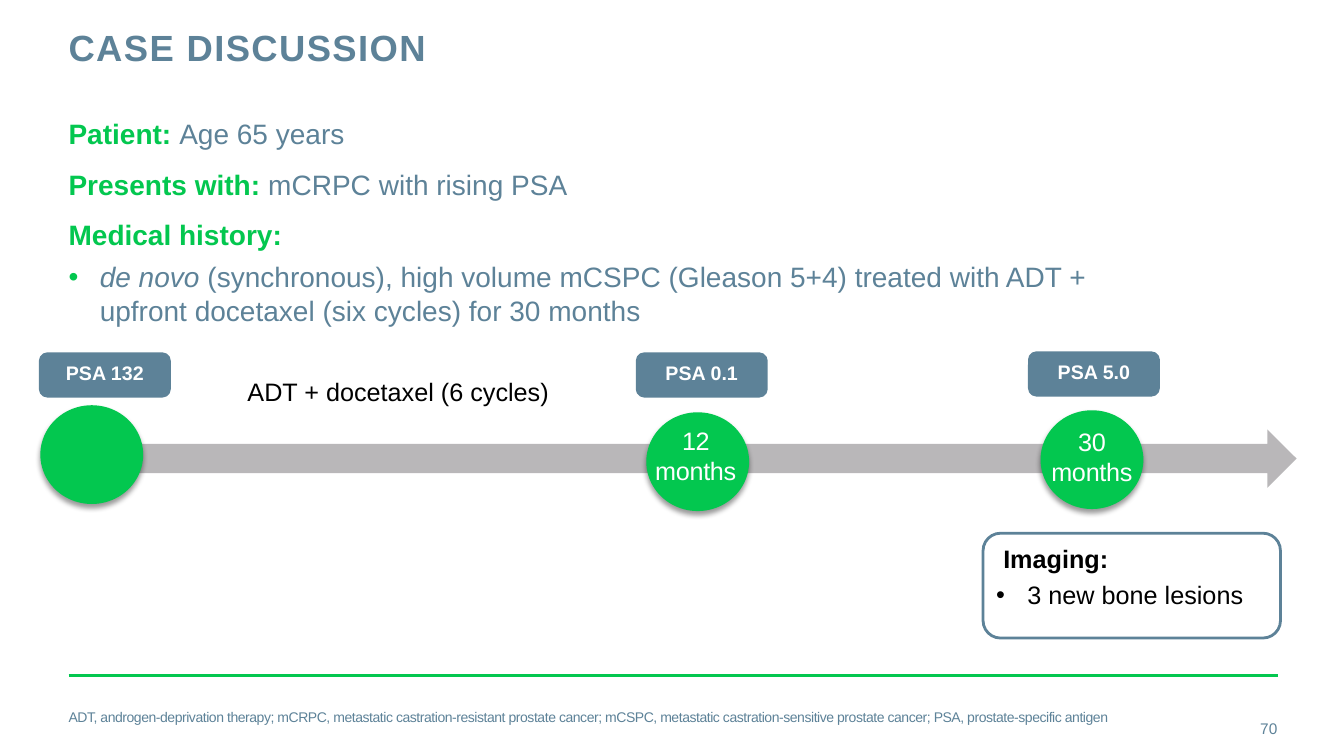
from dataclasses import dataclass
from typing import Optional

from lxml.etree import SubElement
from pptx import Presentation
from pptx.dml.color import RGBColor
from pptx.enum.shapes import MSO_CONNECTOR, MSO_SHAPE as SHAPE
from pptx.enum.text import MSO_ANCHOR as ANCHOR, MSO_AUTO_SIZE, PP_ALIGN as ALIGN
from pptx.oxml.ns import qn
from pptx.util import Inches, Pt

COLORS = {
    "green": "03C74F",
    "slate": "5D8298",
    "grey": "B9B7B9",
    "white": "FFFFFF",
    "black": "000000",
}
FONT = "Arial"
DISC_SIZE = (1.02, 0.98)
PILL_SIZE = (1.28, 0.42)
BULLET_INDENT = 0.31

Box = tuple[float, float, float, float]


@dataclass
class Run:
    text: str
    color: str
    size: float = 18
    bold: bool = False
    italic: bool = False
    tracking: float = 0


@dataclass
class Para:
    lines: list[list[Run]]
    format: dict
    bullet: Optional[str] = None
    indent: float = 0


@dataclass
class Milestone:
    psa: str
    pill: tuple[float, float]
    disc: tuple[float, float]
    label: str = ""
    label_at: tuple[float, float] = (0, 0)


MILESTONES = [
    Milestone("PSA 132", (0.4, 3.51), (0.4, 4.02)),
    Milestone("PSA 0.1", (6.32, 3.51), (6.41, 4.09), "12 months", (6.39, 4.17)),
    Milestone("PSA 5.0", (10.21, 3.5), (10.32, 4.07), "30 months", (10.32, 4.18)),
]


def rgb(name: str) -> RGBColor:
    return RGBColor.from_string(COLORS[name])


def set_all(target, values: dict) -> None:
    for name, value in values.items():
        setattr(target, name, value)


def add_bullet(p, color: str, indent: float) -> None:
    pPr = p._p.get_or_add_pPr()
    pPr.set("marL", str(Inches(indent)))
    pPr.set("indent", str(-Inches(indent)))
    SubElement(SubElement(pPr, qn("a:buClr")), qn("a:srgbClr"), val=COLORS[color])
    SubElement(pPr, qn("a:buFont"), typeface=FONT)
    SubElement(pPr, qn("a:buChar"), char="•")


def add_run(p, run: Run) -> None:
    r = p.add_run()
    r.text = run.text
    set_all(r.font, {"name": FONT, "size": Pt(run.size), "bold": run.bold,
                     "italic": run.italic})
    r.font.color.rgb = rgb(run.color)
    if run.tracking:
        r._r.get_or_add_rPr().set("spc", str(round(run.tracking * 100)))


def write(sp, paras: list[Para], inset: tuple[float, float] = (0, 0),
          anchor=ANCHOR.TOP) -> None:
    """Fill a shape with paragraphs; inset is (horizontal, vertical)."""
    tf = sp.text_frame
    across, down = map(Inches, inset)
    set_all(tf, {"word_wrap": True, "auto_size": MSO_AUTO_SIZE.NONE,
                 "vertical_anchor": anchor, "margin_left": across,
                 "margin_right": across, "margin_top": down, "margin_bottom": down})
    for i, para in enumerate(paras):
        p = tf.add_paragraph() if i else tf.paragraphs[0]
        if para.bullet:
            add_bullet(p, para.bullet, BULLET_INDENT)
        elif para.indent:
            p._p.get_or_add_pPr().set("marL", str(Inches(para.indent)))
        set_all(p, {"alignment": ALIGN.LEFT, **para.format})
        for n, line in enumerate(para.lines):
            if n:
                p.add_line_break()
            for run in line:
                add_run(p, run)


def add_text(s, box: Box, paras: list[Para], **options) -> None:
    write(s.shapes.add_textbox(*map(Inches, box)), paras, **options)


def add_shape(s, kind, box: Box, fill: str, line: Optional[str] = None):
    sp = s.shapes.add_shape(kind, *map(Inches, box))
    sp.shadow.inherit = False
    sp.fill.solid()
    sp.fill.fore_color.rgb = rgb(fill)
    if line:
        sp.line.color.rgb = rgb(line)
        sp.line.width = Pt(2)
    else:
        sp.line.fill.background()
    return sp


def add_soft_shadow(sp) -> None:
    effects = sp._element.spPr.find(qn("a:effectLst"))
    shadow = SubElement(effects, qn("a:outerShdw"), blurRad=str(Pt(4)),
                        dist=str(Pt(3)), dir="5400000", rotWithShape="0")
    color = SubElement(shadow, qn("a:srgbClr"), val=COLORS["black"])
    SubElement(color, qn("a:alpha"), val="40000")


def add_milestone(s, m: Milestone) -> None:
    centred = {"alignment": ALIGN.CENTER}
    add_soft_shadow(add_shape(s, SHAPE.OVAL, (*m.disc, *DISC_SIZE), "green"))
    if m.label:
        label = Run(m.label, "white", tracking=-0.2)
        add_text(s, (*m.label_at, 1.02, 0.71), [Para([[label]], centred)],
                 inset=(0.05, 0.05))
    pill = add_shape(s, SHAPE.ROUNDED_RECTANGLE, (*m.pill, *PILL_SIZE), "slate", "slate")
    psa = Run(m.psa, "white", 14, bold=True)
    write(pill, [Para([[psa]], {**centred, "line_spacing": 0.9})], inset=(0.08, 0.08))


def add_rule(s) -> None:
    rule = s.shapes.add_connector(MSO_CONNECTOR.STRAIGHT, Inches(0.68), Inches(6.7),
                                  Inches(12.68), Inches(6.7))
    rule.line.color.rgb = rgb("green")
    rule.line.width = Pt(2)
    SubElement(rule._element.spPr, qn("a:effectLst"))


def add_case(s) -> None:
    facts = [("Patient: ", "Age 65 years"),
             ("Presents with: ", "mCRPC with rising PSA"),
             ("Medical history:", "")]
    paras = []
    for i, (heading, detail) in enumerate(facts):
        runs = [Run(heading, "green", 20, bold=True)]
        if detail:
            runs.append(Run(detail, "slate", 20))
        paras.append(Para([runs], {"space_before": Pt(12)} if i else {}))
    history = [
        [Run("de novo ", "slate", 20, italic=True),
         Run("(synchronous), high volume mCSPC (Gleason 5+4) treated with ADT +",
             "slate", 20)],
        [Run("upfront docetaxel (six cycles) for 30 months", "slate", 20)],
    ]
    paras.append(Para(history, {"space_before": Pt(6)}, bullet="green"))
    add_text(s, (0.68, 1.16, 11.99, 2.17), paras)


def add_imaging(s) -> None:
    box = add_shape(s, SHAPE.ROUNDED_RECTANGLE, (9.75, 5.29, 2.95, 1.04), "white", "slate")
    spacing = {"line_spacing": 0.9, "space_after": Pt(6.3)}
    write(box, [
        Para([[Run("Imaging:", "black", bold=True)]], spacing, indent=0.07),
        Para([[Run("3 new bone lesions", "black")]], spacing, bullet="black"),
    ], inset=(0.08, 0.08))


def main() -> None:
    prs = Presentation()
    prs.slide_width, prs.slide_height = Inches(13.33), Inches(7.5)
    s = prs.slides.add_slide(prs.slide_layouts[5])

    title = s.shapes.title
    set_all(title, dict(zip(("left", "top", "width", "height"),
                            map(Inches, (0.68, 0.27, 9.56, 0.64)))))
    heading = Run("CASE DISCUSSION", "slate", 26, bold=True, tracking=1)
    write(title, [Para([[heading]], {"line_spacing": Pt(30)})])

    add_rule(s)
    add_case(s)
    add_shape(s, SHAPE.RIGHT_ARROW, (0.65, 4.26, 12.21, 0.58), "grey")
    for m in MILESTONES:
        add_milestone(s, m)
    add_text(s, (2.18, 3.68, 3.54, 0.4),
             [Para([[Run("ADT + docetaxel (6 cycles)", "black")]],
                   {"alignment": ALIGN.CENTER})], inset=(0.1, 0.05))
    add_imaging(s)

    abbreviations = Run(
        "ADT, androgen-deprivation therapy; mCRPC, metastatic castration-resistant "
        "prostate cancer; mCSPC, metastatic castration-sensitive prostate cancer; "
        "PSA, prostate-specific antigen", "slate", 10, tracking=-0.3)
    add_text(s, (0.68, 6.91, 11.77, 0.4), [Para([[abbreviations]], {})],
             anchor=ANCHOR.MIDDLE)
    add_text(s, (11.81, 7.03, 0.86, 0.4),
             [Para([[Run("70", "slate", 11)]], {"alignment": ALIGN.RIGHT})],
             anchor=ANCHOR.MIDDLE)
    prs.save("out.pptx")


if __name__ == "__main__":
    main()
